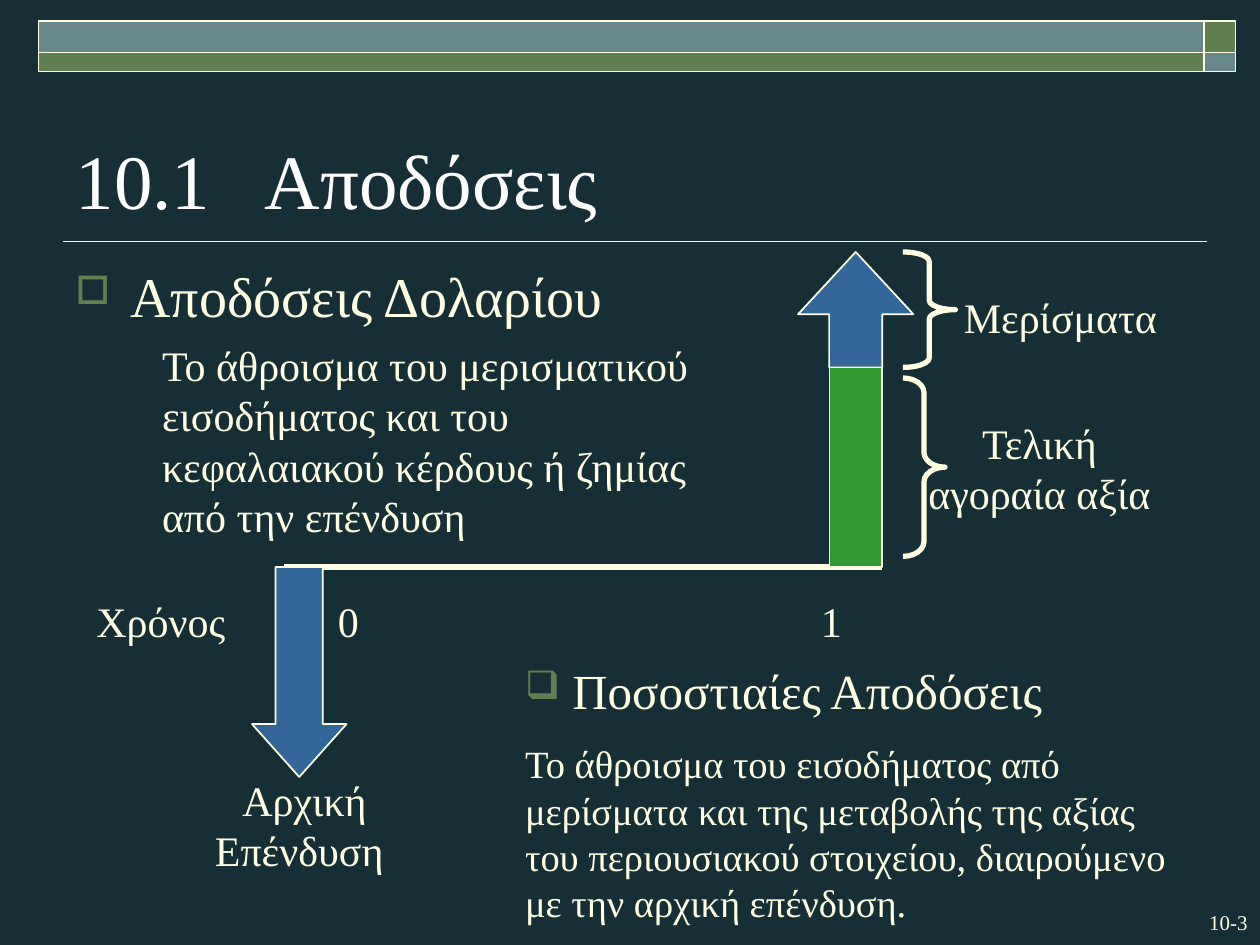
from dataclasses import dataclass

from lxml import etree
from pptx import Presentation
from pptx.dml.color import RGBColor
from pptx.enum.shapes import MSO_CONNECTOR, MSO_SHAPE
from pptx.enum.text import MSO_ANCHOR, MSO_AUTO_SIZE, PP_ALIGN
from pptx.oxml.ns import qn
from pptx.util import Pt

RECT, UP, DOWN = MSO_SHAPE.RECTANGLE, MSO_SHAPE.UP_ARROW, MSO_SHAPE.DOWN_ARROW
BRACE = MSO_SHAPE.RIGHT_BRACE
LEFT, CENTER, RIGHT = PP_ALIGN.LEFT, PP_ALIGN.CENTER, PP_ALIGN.RIGHT

NAVY = RGBColor(0x16, 0x2E, 0x36)
CREAM = RGBColor(0xFF, 0xFF, 0xE3)
WHITE = RGBColor(0xFF, 0xFF, 0xFF)
OLIVE = RGBColor(0x61, 0x80, 0x52)
TEAL = RGBColor(0x69, 0x88, 0x8B)
BLUE = RGBColor(0x33, 0x66, 0x99)
GREEN = RGBColor(0x33, 0x99, 0x33)
FONT = "Times New Roman"


@dataclass
class Box:
    x: float
    y: float
    w: float
    h: float

    def lengths(self) -> list:
        return [Pt(v) for v in (self.x, self.y, self.w, self.h)]


@dataclass
class Para:
    text: str
    size: float = 24
    align: PP_ALIGN = LEFT
    before: float = 0
    indent: float = 0
    hanging: float = 0
    bullet: str = ""
    bullet_pct: int = 100


@dataclass
class Block:
    kind: MSO_SHAPE
    box: Box
    fill: RGBColor | None = None
    weight: float = 1
    adj: tuple = ()


def add_run(p, text: str, size: float, color: RGBColor) -> None:
    r = p.add_run()
    r.text = text
    r.font.name, r.font.size, r.font.color.rgb = FONT, Pt(size), color


def set_bullet(p, para: Para) -> None:
    pPr = p._p.get_or_add_pPr()
    pPr.set("marL", str(Pt(para.indent)))
    pPr.set("indent", str(Pt(-para.hanging)))
    if para.bullet:
        clr = etree.SubElement(pPr, qn("a:buClr"))
        etree.SubElement(clr, qn("a:srgbClr"), val=str(OLIVE))
        etree.SubElement(pPr, qn("a:buSzPct"), val=str(para.bullet_pct * 1000))
        etree.SubElement(pPr, qn("a:buChar"), char=para.bullet)


def add_text(s, box: Box, *paras: Para) -> None:
    tf = s.shapes.add_textbox(*box.lengths()).text_frame
    tf.word_wrap = True
    for i, para in enumerate(paras):
        p = tf.add_paragraph() if i else tf.paragraphs[0]
        p.alignment = para.align
        p.space_before = Pt(para.before)
        set_bullet(p, para)
        add_run(p, para.text, para.size, CREAM)


def add_block(s, block: Block) -> None:
    sp = s.shapes.add_shape(block.kind, *block.box.lengths())
    sp.shadow.inherit = False
    for i, value in enumerate(block.adj):
        sp.adjustments[i] = value
    if block.fill is None:
        sp.fill.background()
    else:
        sp.fill.solid()
        sp.fill.fore_color.rgb = block.fill
    sp.line.color.rgb, sp.line.width = CREAM, Pt(block.weight)


def add_rule(s, x1: float, x2: float, y: float, weight: float) -> None:
    c = s.shapes.add_connector(MSO_CONNECTOR.STRAIGHT, Pt(x1), Pt(y), Pt(x2), Pt(y))
    c.line.color.rgb, c.line.width = CREAM, Pt(weight)
    etree.SubElement(c._element.spPr, qn("a:effectLst"))


def add_title(s, text: str) -> None:
    sp = s.shapes.title
    sp.left, sp.top, sp.width, sp.height = Box(36, 42, 648, 90).lengths()
    tf = sp.text_frame
    tf.auto_size, tf.vertical_anchor = MSO_AUTO_SIZE.NONE, MSO_ANCHOR.BOTTOM
    p = tf.paragraphs[0]
    p.alignment = LEFT
    add_run(p, text, 44, WHITE)


def main() -> None:
    prs = Presentation()
    prs.slide_width, prs.slide_height = Pt(720), Pt(540)
    s = prs.slides.add_slide(prs.slide_layouts[5])
    s.background.fill.solid()
    s.background.fill.fore_color.rgb = NAVY

    # Header band, rule and page number
    add_rule(s, 36, 690, 138, 1)
    columns, rows = ((22, 666), (688, 18)), ((12, 18), (30, 11))
    for i, (x, w) in enumerate(columns):
        for j, (y, h) in enumerate(rows):
            add_block(s, Block(RECT, Box(x, y, w, h), OLIVE if (i + j) % 2 else TEAL))
    add_text(s, Box(660, 516, 60, 21.6), Para("10-3", 12, RIGHT))

    # Title and dollar returns
    add_title(s, "10.1\tΑποδόσεις")
    add_text(
        s, Box(36, 146, 389, 152),
        Para("Αποδόσεις Δολαρίου", 32, indent=31.5, hanging=31.5,
             bullet="□", bullet_pct=70),
        Para("Το άθροισμα του μερισματικού εισοδήματος και του "
             "κεφαλαιακού κέρδους ή ζημίας από την επένδυση",
             before=6, indent=49.5),
    )

    # Time axis, cash-flow arrows and braces
    add_rule(s, 162, 504, 324, 3)
    for block in (
        Block(UP, Box(456, 144, 66, 66), BLUE, adj=(0.46, 0.54)),
        Block(RECT, Box(474, 210, 30, 114), GREEN),
        Block(DOWN, Box(144, 324, 54, 120), BLUE, adj=(0.5, 0.56)),
        Block(BRACE, Box(516, 216, 24, 102), weight=3, adj=(0.35, 0.5)),
        Block(BRACE, Box(516, 144, 30, 66), weight=3, adj=(0.18, 0.5)),
    ):
        add_block(s, block)

    # Diagram labels
    for text, box, align in (
        ("Χρόνος", Box(48, 337, 96, 36), LEFT),
        ("0", Box(186, 337, 30, 36), LEFT),
        ("1", Box(462, 337, 30, 36), LEFT),
        ("Αρχική Επένδυση ", Box(108, 439, 132, 65.5), CENTER),
        ("Τελική αγοραία αξία", Box(516, 235, 156, 65.5), CENTER),
        ("Μερίσματα", Box(528, 163, 156, 36), CENTER),
    ):
        add_text(s, box, Para(text, align=align))

    # Percentage returns
    add_text(
        s, Box(293, 374, 396, 161),
        Para("Ποσοστιαίες Αποδόσεις", 28, indent=27, hanging=27,
             bullet="❑", bullet_pct=80),
        Para("Το άθροισμα του εισοδήματος από μερίσματα και της μεταβολής "
             "της αξίας του περιουσιακού στοιχείου, διαιρούμενο με την "
             "αρχική επένδυση.", 22, before=12),
    )
    prs.save("out.pptx")


if __name__ == "__main__":
    main()
